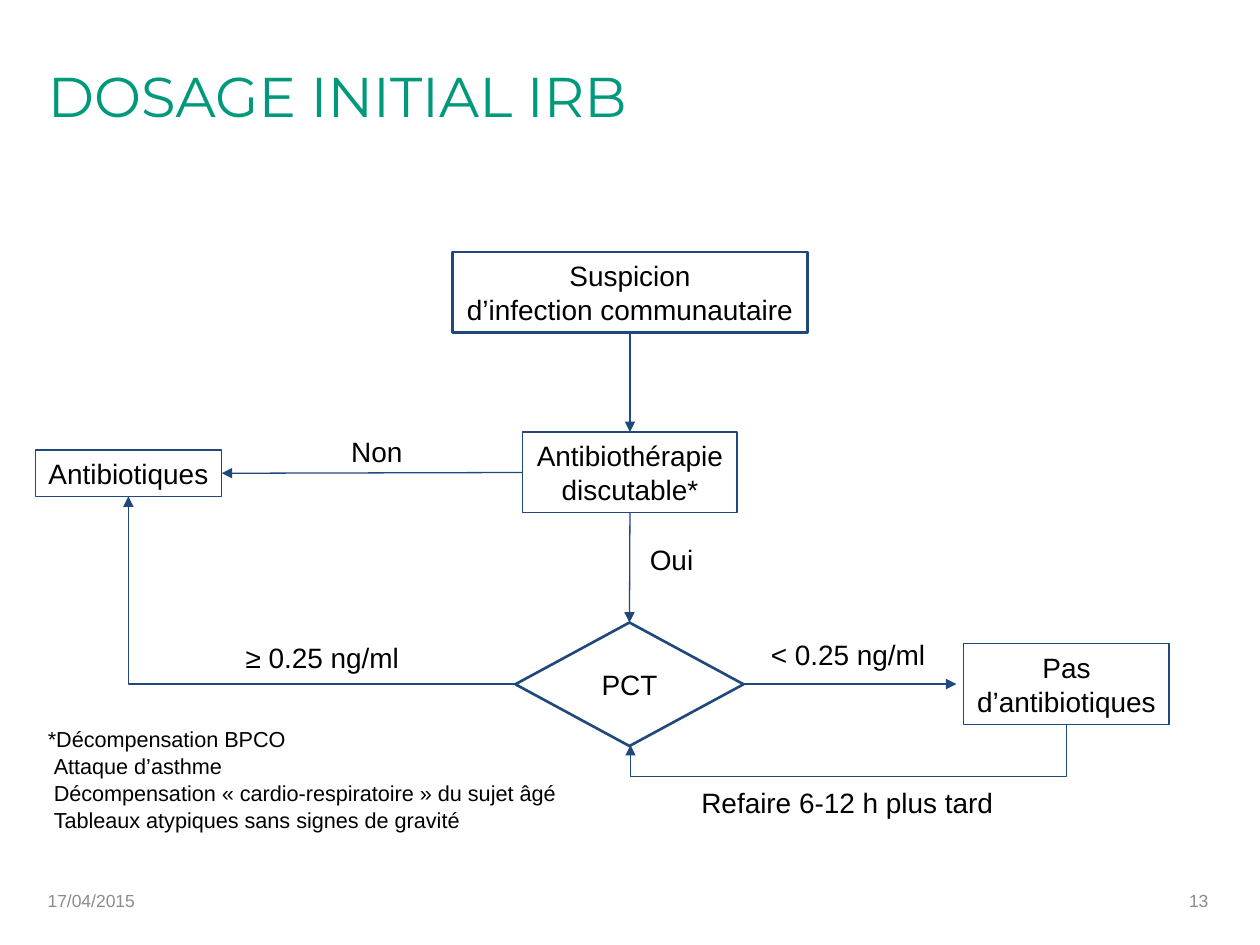
"""Build a slide with the decision flow for the first IRB dosage."""
from dataclasses import dataclass

from lxml.etree import SubElement
from pptx import Presentation
from pptx.dml.color import RGBColor
from pptx.enum.shapes import MSO_CONNECTOR, MSO_SHAPE
from pptx.enum.text import MSO_ANCHOR, MSO_AUTO_SIZE, PP_ALIGN
from pptx.oxml.ns import qn
from pptx.shapes.autoshape import Shape
from pptx.shapes.connector import Connector
from pptx.slide import Slide
from pptx.text.text import TextFrame
from pptx.util import Cm, Pt

NAVY = RGBColor(0x1F, 0x49, 0x7D)
GREEN = RGBColor(0x00, 0x99, 0x7C)
BLACK = RGBColor(0x00, 0x00, 0x00)
GREY = RGBColor(0x8C, 0x8C, 0x8C)
EDGE = 0.71


@dataclass(frozen=True)
class Node:
    text: str
    left: float
    top: float
    width: float
    height: float = 1.63
    line: float = 0.75
    form: MSO_SHAPE = MSO_SHAPE.RECTANGLE


@dataclass(frozen=True)
class Label:
    text: str
    left: float
    top: float
    width: float
    height: float = 0.94
    size: float = 16
    color: RGBColor = BLACK
    align: PP_ALIGN = PP_ALIGN.LEFT
    anchor: MSO_ANCHOR = MSO_ANCHOR.TOP


NODES = {
    "start": Node("Suspicion\nd’infection communautaire", 9.12, 5.08, 7.16, line=1.5),
    "doubt": Node("Antibiothérapie\ndiscutable*", 10.54, 8.71, 4.32),
    "test": Node("PCT", 10.39, 12.55, 4.6, 2.49, 1.5, MSO_SHAPE.DIAMOND),
    "treat": Node("Antibiotiques", EDGE, 9.07, 3.76, 0.94),
    "none": Node("Pas\nd’antibiotiques", 19.43, 12.98, 4.14),
}
LINKS = [("start", 2, "doubt", 0), ("doubt", 2, "test", 0), ("doubt", 1, "treat", 3)]
LABELS = [
    Label("≥ 0.25 ng/ml", 4.7, 12.78, 3.66),
    Label("< 0.25 ng/ml", 15.29, 12.73, 3.66),
    Label("Non", 6.83, 8.64, 1.55),
    Label("Oui", 12.85, 10.82, 1.4),
    Label("Refaire 6-12 h plus tard", 13.89, 15.72, 6.48),
    Label("17/04/2015", EDGE, 17.65, 5.92, 1.02, 10, GREY, anchor=MSO_ANCHOR.MIDDLE),
    Label("13", 18.69, 17.65, 5.92, 1.02, 10, GREY, PP_ALIGN.RIGHT, MSO_ANCHOR.MIDDLE),
]
NOTES = [
    "*Décompensation BPCO",
    "Attaque d’asthme",
    "Décompensation « cardio-respiratoire » du sujet âgé",
    "Tableaux atypiques sans signes de gravité",
]


def style(frame: TextFrame, size: float, color: RGBColor, align: PP_ALIGN,
          face: str = "Arial") -> None:
    for para in frame.paragraphs:
        para.alignment = align
        para.font.name = face
        para.font.size = Pt(size)
        para.font.color.rgb = color


def place(shape: Shape, left: float, top: float, width: float, height: float) -> None:
    shape.left, shape.top = Cm(left), Cm(top)
    shape.width, shape.height = Cm(width), Cm(height)


def add_node(slide: Slide, node: Node) -> Shape:
    shape = slide.shapes.add_shape(node.form, Cm(node.left), Cm(node.top),
                                   Cm(node.width), Cm(node.height))
    shape.shadow.inherit = False
    shape.fill.background()
    shape.line.color.rgb = NAVY
    shape.line.width = Pt(node.line)
    frame = shape.text_frame
    frame.text = node.text
    frame.word_wrap = False
    frame.vertical_anchor = MSO_ANCHOR.MIDDLE
    style(frame, 16, BLACK, PP_ALIGN.CENTER)
    return shape


def add_label(slide: Slide, label: Label) -> None:
    box = slide.shapes.add_textbox(Cm(label.left), Cm(label.top),
                                   Cm(label.width), Cm(label.height))
    frame = box.text_frame
    frame.text = label.text
    frame.word_wrap = label.align == PP_ALIGN.RIGHT
    frame.vertical_anchor = label.anchor
    style(frame, label.size, label.color, label.align)


def add_arrow(slide: Slide, kind: MSO_CONNECTOR, start: tuple[float, float] = (0, 0),
              end: tuple[float, float] = (0, 0)) -> Connector:
    arrow = slide.shapes.add_connector(kind, *map(Cm, start + end))
    arrow.line.color.rgb = NAVY
    arrow.line.width = Pt(0.75)
    SubElement(arrow.line._get_or_add_ln(), qn("a:tailEnd"), type="triangle")
    SubElement(arrow._element.spPr, qn("a:effectLst"))
    return arrow


def add_notes(body: Shape) -> None:
    place(body, EDGE, 14.48, 10.92, 2.46)
    frame = body.text_frame
    frame.text = "\n".join(NOTES)
    frame.word_wrap = False
    frame.auto_size = MSO_AUTO_SIZE.NONE
    for rank, para in enumerate(frame.paragraphs):
        props = para._p.get_or_add_pPr()
        props.set("marL", str(Cm(0.12 if rank else 0)))
        props.set("indent", "0")
        para.space_before = Pt(0)
        para.line_spacing = 1.04
        SubElement(props, qn("a:buNone"))
    style(frame, 12.4, BLACK, PP_ALIGN.LEFT)


def main() -> None:
    deck = Presentation()
    deck.slide_width, deck.slide_height = Cm(25.4), Cm(19.05)
    slide = deck.slides.add_slide(deck.slide_layouts[1])
    title = slide.shapes.title
    place(title, EDGE, 0.33, 14.15, 3.18)
    title.text_frame.text = "DOSAGE INITIAL IRB"
    title.text_frame.vertical_anchor = MSO_ANCHOR.MIDDLE
    style(title.text_frame, 32, GREEN, PP_ALIGN.LEFT, "Montserrat")
    add_notes(slide.placeholders[1])

    nodes = {name: add_node(slide, node) for name, node in NODES.items()}
    for tail, out, head, into in LINKS:
        arrow = add_arrow(slide, MSO_CONNECTOR.STRAIGHT)
        arrow.begin_connect(nodes[tail], out)
        arrow.end_connect(nodes[head], into)
    add_arrow(slide, MSO_CONNECTOR.STRAIGHT, (14.99, 13.79), (19.28, 13.79))

    high = add_arrow(slide, MSO_CONNECTOR.ELBOW, (10.39, 13.79), (2.59, 10.01))
    high._element.spPr.prstGeom.set("prst", "bentConnector2")
    again = add_arrow(slide, MSO_CONNECTOR.ELBOW, (16.89, 10.41), (17.32, 19.2))
    again._element.spPr.xfrm.set("rot", str(90 * 60000))
    guides = again._element.spPr.prstGeom.get_or_add_avLst()
    SubElement(guides, qn("a:gd"), name="adj1", fmla="val 249200")

    for label in LABELS:
        add_label(slide, label)
    deck.save("out.pptx")


if __name__ == "__main__":
    main()
